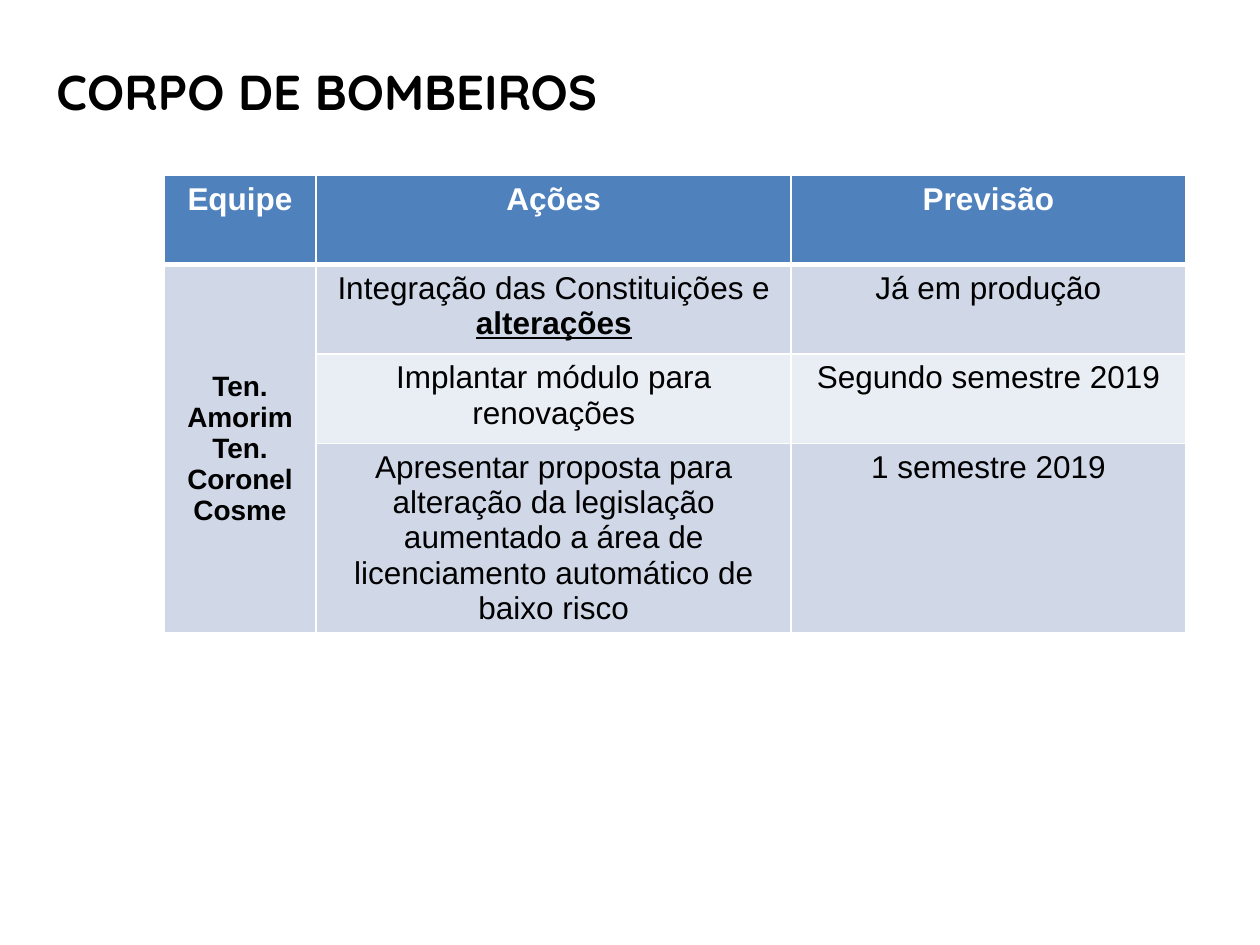
from pptx import Presentation
from pptx.dml.color import RGBColor
from pptx.enum.text import MSO_ANCHOR as Anchor, PP_ALIGN as Align
from pptx.oxml.xmlchemy import OxmlElement
from pptx.util import Inches, Pt

WHITE, BLACK = "FFFFFF", "000000"
HEADER_FILL, BANDS = "4F81BD", ("D0D8E8", "E9EDF4")

HEADER = {"name": "Arial", "size": Pt(18), "bold": True, "color": WHITE}
BODY = {**HEADER, "bold": False, "color": BLACK}
EMPHASIS = {**BODY, "bold": True, "underline": True}
TEAM = {**BODY, "size": Pt(16), "bold": True}
TITLE = {"name": "Quicksand", "size": Pt(28), "bold": True, "color": BLACK}

COLUMNS = (1.21, 3.77, 3.13)
ROWS = (0.71, 0.71, 0.71, 1.49)
HEADINGS = ("Equipe", "Ações", "Previsão")
TEAM_NAMES = "Ten. Amorim Ten. Coronel Cosme"
ACTIONS = (
    ((("Integração das Constituições e ", BODY), ("alterações", EMPHASIS)),
     "Já em produção"),
    ((("Implantar módulo para renovações", BODY),), "Segundo semestre 2019"),
    ((("Apresentar proposta para alteração da legislação aumentado a área de "
       "licenciamento automático de baixo risco", BODY),), "1 semestre 2019"),
)


def rgb(value):
    return RGBColor.from_string(value)


def write(frame, pieces, align):
    paragraph = frame.paragraphs[0]
    paragraph.alignment = align
    for text, style in pieces:
        run = paragraph.add_run()
        run.text = text
        for key, value in style.items():
            if key == "color":
                run.font.color.rgb = rgb(value)
            else:
                setattr(run.font, key, value)


def add_border(cell, side, width):
    line = OxmlElement(f"a:{side}")
    line.set("w", str(Pt(width)))
    fill = OxmlElement("a:solidFill")
    color = OxmlElement("a:srgbClr")
    color.set("val", WHITE)
    fill.append(color)
    line.append(fill)
    cell._tc.get_or_add_tcPr().append(line)


def style_cell(cell, row):
    for side in ("lnL", "lnR", "lnT", "lnB"):
        heavy = (row, side) in ((0, "lnB"), (1, "lnT"))
        add_border(cell, side, 3 if heavy else 1)
    cell.fill.solid()
    cell.fill.fore_color.rgb = rgb(BANDS[(row - 1) % 2] if row else HEADER_FILL)


def add_title(slide, left, top, width, height):
    box = slide.shapes.add_textbox(left, top, width, height)
    box.text_frame.word_wrap = True
    write(box.text_frame, [("CORPO DE BOMBEIROS", TITLE)], Align.JUSTIFY)


def add_schedule(slide, left, top, width, height):
    table = slide.shapes.add_table(
        len(ROWS), len(COLUMNS), left, top, width, height).table
    for column, share in zip(table.columns, COLUMNS):
        column.width = int(width * share / sum(COLUMNS))
    for row, share in zip(table.rows, ROWS):
        row.height = int(height * share / sum(ROWS))
    for row in range(len(ROWS)):
        for column in range(len(COLUMNS)):
            style_cell(table.cell(row, column), row)

    for column, heading in enumerate(HEADINGS):
        write(table.cell(0, column).text_frame, [(heading, HEADER)], Align.CENTER)

    team = table.cell(1, 0)
    team.merge(table.cell(len(ACTIONS), 0))
    team.vertical_anchor = Anchor.MIDDLE
    write(team.text_frame, [(TEAM_NAMES, TEAM)], Align.CENTER)

    for row, (action, forecast) in enumerate(ACTIONS, 1):
        write(table.cell(row, 1).text_frame, action, Align.CENTER)
        write(table.cell(row, 2).text_frame, [(forecast, BODY)], Align.CENTER)


def main():
    deck = Presentation()
    deck.slide_width, deck.slide_height = Inches(10), Inches(7.5)
    slide = deck.slides.add_slide(deck.slide_layouts[6])
    add_schedule(slide, Inches(1.3), Inches(1.39),
                 Inches(sum(COLUMNS)), Inches(sum(ROWS)))
    add_title(slide, Inches(0.35), Inches(0.44), Inches(8.66), Inches(5.36))
    deck.save("out.pptx")


if __name__ == "__main__":
    main()
